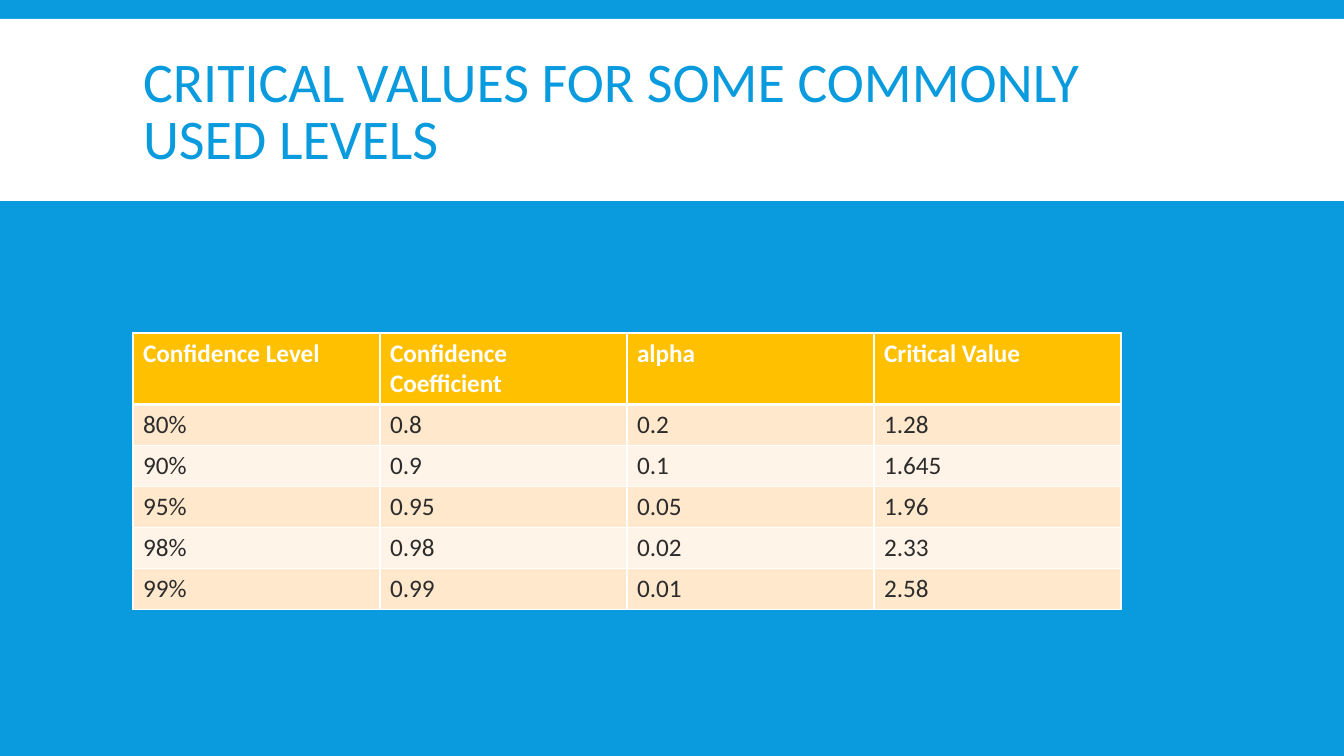
from lxml.etree import SubElement
from pptx import Presentation
from pptx.dml.color import RGBColor
from pptx.enum.shapes import MSO_SHAPE
from pptx.enum.text import MSO_ANCHOR, MSO_AUTO_SIZE, PP_ALIGN
from pptx.oxml.ns import qn
from pptx.util import Emu, Pt

BLUE, WHITE, GOLD, INK = "099BDD", "FFFFFF", "FFC000", "2C2C2C"
BANDS = ("FFE8CC", "FFF4E7")
ROWS = [
    ("Confidence Level", "Confidence Coefficient", "alpha", "Critical Value"),
    ("80%", "0.8", "0.2", "1.28"),
    ("90%", "0.9", "0.1", "1.645"),
    ("95%", "0.95", "0.05", "1.96"),
    ("98%", "0.98", "0.02", "2.33"),
    ("99%", "0.99", "0.01", "2.58"),
]


def px(n):
    return Emu(round(n * 914400 / 100.8))


def fill(target, color):
    target.fill.solid()
    target.fill.fore_color.rgb = RGBColor.from_string(color)


def apply(target, values):
    for name, value in values.items():
        setattr(target, name, value)


class SlideBuilder:
    font = "Calibri"

    def __init__(self, prs):
        self.s = prs.slides.add_slide(prs.slide_layouts[5])
        fill(self.s.background, BLUE)

    def style(self, p, size, color, bold=False):
        apply(p.font, {"name": self.font, "size": Pt(size), "bold": bold})
        p.font.color.rgb = RGBColor.from_string(color)

    def band(self, x, y, w, h, color):
        sp = self.s.shapes.add_shape(MSO_SHAPE.RECTANGLE, *map(px, (x, y, w, h)))
        sp.shadow.inherit = False
        fill(sp, color)
        sp.line.fill.background()
        self.s.shapes.title.element.addprevious(sp.element)

    def title(self, x, y, w, h, text):
        sp = self.s.shapes.title
        apply(sp, {"left": px(x), "top": px(y), "width": px(w), "height": px(h)})
        tf = sp.text_frame
        tf.text = text
        apply(tf, {"word_wrap": True, "auto_size": MSO_AUTO_SIZE.NONE,
                   "vertical_anchor": MSO_ANCHOR.MIDDLE})
        p = tf.paragraphs[0]
        apply(p, {"alignment": PP_ALIGN.LEFT, "line_spacing": 0.85})
        self.style(p, 40, BLUE)

    def borders(self, cell, widths):
        tcPr = cell._tc.get_or_add_tcPr()
        for side, width in widths.items():
            ln = SubElement(tcPr, qn(f"a:ln{side}"), w=str(Pt(width)))
            color = SubElement(SubElement(ln, qn("a:solidFill")), qn("a:srgbClr"))
            color.set("val", WHITE)

    def table(self, x, y, col_w, row_h, rows):
        cols = len(rows[0])
        table = self.s.shapes.add_table(
            len(rows), cols, px(x), px(y), px(col_w * cols), px(row_h * len(rows))
        ).table
        for col in table.columns:
            col.width = px(col_w)
        for i, values in enumerate(rows):
            table.rows[i].height = px(row_h)
            header = i == 0
            widths = {"L": 1, "R": 1, "T": 3 if i == 1 else 1, "B": 3 if header else 1}
            for j, text in enumerate(values):
                cell = table.cell(i, j)
                cell.text = text
                self.borders(cell, widths)
                fill(cell, GOLD if header else BANDS[(i - 1) % 2])
                self.style(cell.text_frame.paragraphs[0], 18, WHITE if header else INK, header)


def main():
    prs = Presentation()
    apply(prs, {"slide_width": px(1344), "slide_height": px(756)})
    b = SlideBuilder(prs)
    b.band(0, 19, 1344, 182, WHITE)
    b.title(133, 31, 1079, 166, "CRITICAL VALUES FOR SOME COMMONLY USED LEVELS")
    b.table(133, 333, 247, 41, ROWS)
    prs.save("out.pptx")


if __name__ == "__main__":
    main()
